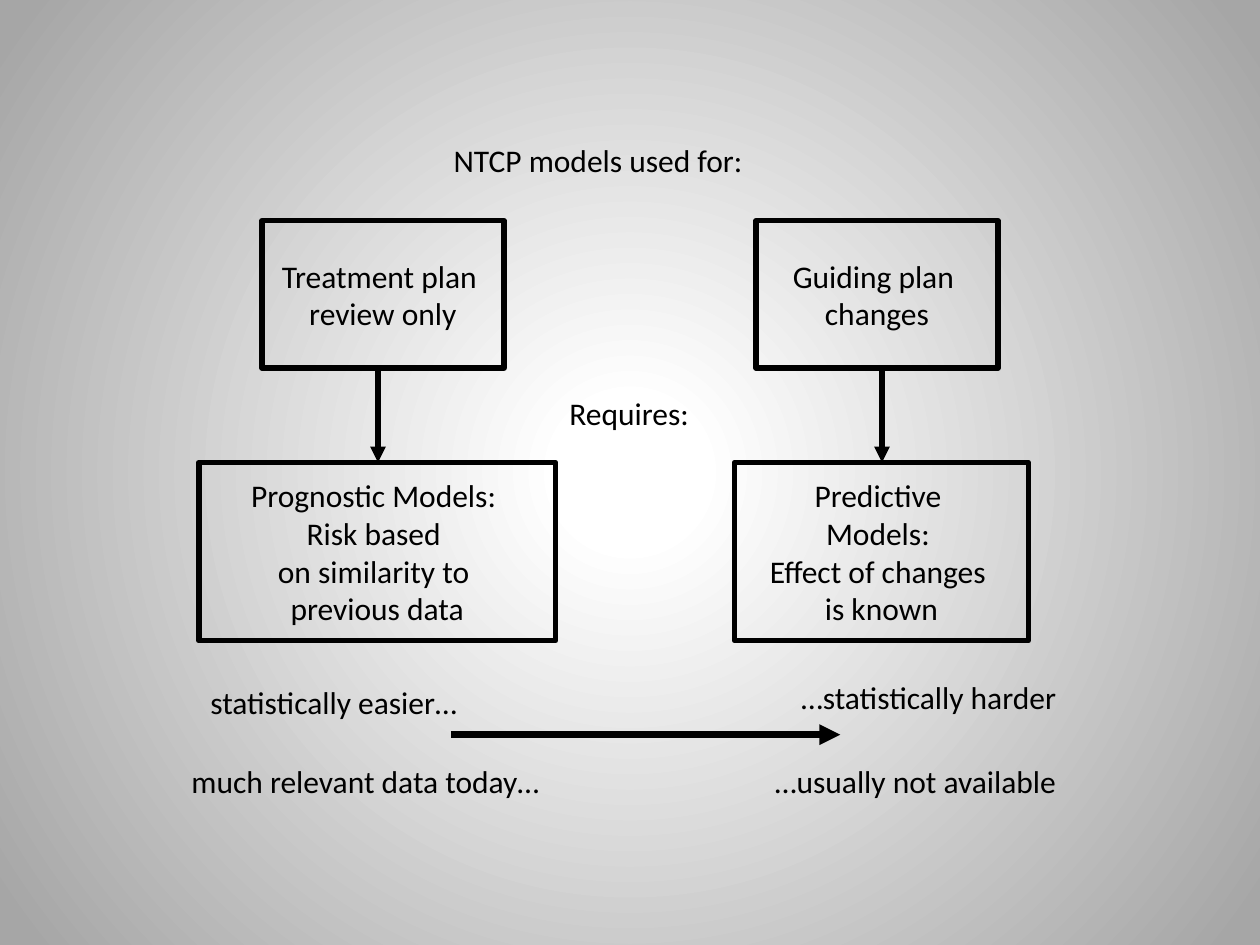
from lxml.etree import SubElement
from pptx import Presentation
from pptx.dml.color import RGBColor
from pptx.enum.shapes import MSO_CONNECTOR, MSO_SHAPE
from pptx.enum.text import MSO_ANCHOR, MSO_AUTO_SIZE, PP_ALIGN
from pptx.oxml import parse_xml
from pptx.oxml.ns import nsdecls, qn
from pptx.util import Cm, Pt

# Content: places are in centimetres
TITLE = ("NTCP models used for:", 8.89, 2.72, 7.16)
LABELS = [  # text, left, top, width
    ("Requires:", 11.23, 7.82, 3.25),
    ("statistically easier…", 3.99, 13.64, 6.12),
    ("…statistically harder", 15.9, 13.54, 6.22),
    ("much relevant data today…", 3.61, 15.24, 8.36),
    ("…usually not available", 15.37, 15.24, 6.93),
]
USE_TOP, USE_H = 4.45, 2.97
MODEL_TOP, MODEL_H = 9.32, 3.6
BOXES = [  # lines, left, top, width, height
    (["Treatment plan ", "review only"], 5.28, USE_TOP, 4.88, USE_H),
    (["Guiding plan ", "changes"], 15.24, USE_TOP, 4.88, USE_H),
    (["Prognostic Models: ", "Risk based ", "on similarity to ", "previous data"],
     4.01, MODEL_TOP, 7.19, MODEL_H),
    (["Predictive ", "Models: ", "Effect of changes ", "is known"],
     14.81, MODEL_TOP, 5.92, MODEL_H),
]
ARROWS = [(x, USE_TOP + USE_H, x, MODEL_TOP, 3) for x in (7.62, 17.78)]
ARROWS.append((9.09, 14.81, 16.94, 14.81, 4))  # x1, y1, x2, y2, points

BLACK = "000000"
BACKGROUND = [(0.09, "FFFFFF"), (0.97, "A6A6A6")]
FONT = {"name": "Calibri", "size": Pt(18), "bold": False}
LABEL_FRAME = {"word_wrap": False, "auto_size": MSO_AUTO_SIZE.SHAPE_TO_FIT_TEXT,
               "vertical_anchor": MSO_ANCHOR.TOP}
BOX_FRAME = {"word_wrap": False, "vertical_anchor": MSO_ANCHOR.MIDDLE}
LABEL_H = 1.02


def paint(color, value):
    color.rgb = RGBColor.from_string(value)


def set_all(obj, values):
    for name, value in values.items():
        setattr(obj, name, value)


def write(sp, lines, frame, align):
    tf = sp.text_frame
    set_all(tf, frame)
    for i, line in enumerate(lines):
        p = tf.add_paragraph() if i else tf.paragraphs[0]
        p.alignment = align
        r = p.add_run()
        r.text = line
        set_all(r.font, FONT)
        paint(r.font.color, BLACK)


def outline(line, points):
    line.width = Pt(points)
    paint(line.color, BLACK)


prs = Presentation()
prs.slide_width, prs.slide_height = Cm(25.4), Cm(19.05)
s = prs.slides.add_slide(prs.slide_layouts[5])

# Background: light centre, grey edge
fill = s.background.fill
fill.gradient()
for stop, (position, value) in zip(fill.gradient_stops, BACKGROUND):
    stop.position = position
    paint(stop.color, value)
grad = s.background._cSld.find(".//" + qn("a:gradFill"))
grad.replace(grad.find(qn("a:lin")), parse_xml(
    f'<a:path {nsdecls("a")} path="circle">'
    '<a:fillToRect l="50000" t="50000" r="50000" b="50000"/></a:path>'))

# Title and labels
text, x, y, w = TITLE
title = s.shapes.title
set_all(title, {"left": Cm(x), "top": Cm(y), "width": Cm(w), "height": Cm(LABEL_H)})
write(title, [text], LABEL_FRAME, PP_ALIGN.LEFT)
for text, x, y, w in LABELS:
    sp = s.shapes.add_textbox(Cm(x), Cm(y), Cm(w), Cm(LABEL_H))
    write(sp, [text], LABEL_FRAME, PP_ALIGN.LEFT)

# Boxes
for lines, *place in BOXES:
    sp = s.shapes.add_shape(MSO_SHAPE.RECTANGLE, *map(Cm, place))
    sp.shadow.inherit = False
    sp.fill.background()
    outline(sp.line, 3)
    write(sp, lines, BOX_FRAME, PP_ALIGN.CENTER)

# Arrows
for *ends, points in ARROWS:
    sp = s.shapes.add_connector(MSO_CONNECTOR.STRAIGHT, *map(Cm, ends))
    outline(sp.line, points)
    SubElement(sp.line._get_or_add_ln(), qn("a:tailEnd"), type="triangle")
    SubElement(sp._element.spPr, qn("a:effectLst"))

prs.save("out.pptx")
